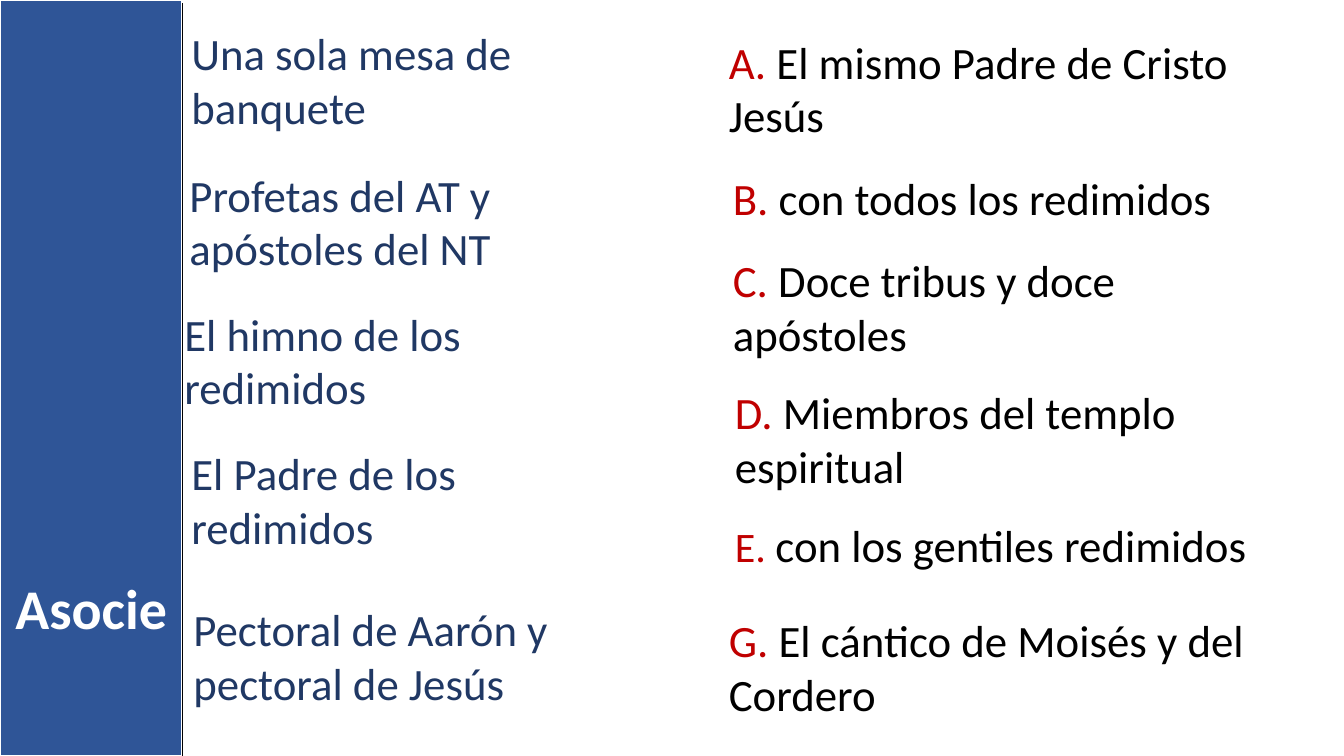
from lxml import etree
from pptx import Presentation
from pptx.dml.color import RGBColor
from pptx.enum.shapes import MSO_CONNECTOR, MSO_SHAPE
from pptx.enum.text import MSO_ANCHOR, MSO_AUTO_SIZE, PP_ALIGN
from pptx.oxml.ns import qn
from pptx.util import Inches, Pt

RECTANGLE = MSO_SHAPE.RECTANGLE
STRAIGHT = MSO_CONNECTOR.STRAIGHT
TOP = MSO_ANCHOR.TOP
CENTER = PP_ALIGN.CENTER
NO_AUTOFIT = MSO_AUTO_SIZE.NONE
TITLE_ONLY = 5

SLIDE_WIDTH, SLIDE_HEIGHT = 13.33, 7.5
SIDEBAR_WIDTH = 1.81
FONT = "Calibri"
TEXT_SIZE, TITLE_SIZE = 32, 40
LINE_HEIGHT, PADDING = 0.54, 0.1

BLUE, NAVY, RED = "2F5597", "203864", "C00000"
BLACK, WHITE = "000000", "FFFFFF"

# Left, top, width, text
CONCEPTS = [
    (1.8, 0.21, 4.43, "Una sola mesa de banquete"),
    (1.78, 1.61, 4.62, "Profetas del AT y apóstoles del NT"),
    (1.73, 2.99, 4.11, "El himno de los redimidos"),
    (1.8, 4.37, 4.6, "El Padre de los redimidos"),
    (1.82, 5.92, 4.41, "Pectoral de Aarón y pectoral de Jesús"),
]
# Left, top, width, lines, letter, letter size, text
ANSWERS = [
    (7.13, 0.29, 6.05, 2, "A. ", 32, "El mismo Padre de Cristo Jesús"),
    (7.17, 1.64, 5.92, 1, "B. ", 32, "con todos los redimidos"),
    (7.17, 2.46, 5.74, 2, "C. ", 32, "Doce tribus y doce apóstoles"),
    (7.19, 3.77, 5.8, 2, "D. ", 32, "Miembros del templo espiritual"),
    (7.19, 5.09, 5.53, 1, "E. ", 30, "con los gentiles redimidos"),
    (7.13, 6.03, 5.59, 2, "G. ", 32, "El cántico de Moisés y del Cordero"),
]


def color(value):
    return RGBColor.from_string(value)


def add_run(paragraph, text, size, fill, bold=False):
    run = paragraph.add_run()
    run.text = text
    run.font.name = FONT
    run.font.size = Pt(size)
    run.font.bold = bold
    run.font.color.rgb = color(fill)


def add_phrase(slide, left, top, width, lines, runs):
    """Place a text box as tall as its lines; runs are (text, size, color)."""
    height = lines * LINE_HEIGHT + PADDING
    box = slide.shapes.add_textbox(*map(Inches, (left, top, width, height)))
    box.text_frame.word_wrap = True
    for run in runs:
        add_run(box.text_frame.paragraphs[0], *run)


def add_sidebar(slide, left, top, width, height):
    bar = slide.shapes.add_shape(RECTANGLE, *map(Inches, (left, top, width, height)))
    bar.shadow.inherit = False
    bar.fill.solid()
    bar.fill.fore_color.rgb = color(BLUE)
    bar.line.color.rgb = color(WHITE)
    bar.line.width = Pt(1.5)

    title = slide.shapes.title
    title.left, title.top = Inches(left), Inches(top + 0.752 * height)
    title.width, title.height = Inches(width), Inches(0.77)
    frame = title.text_frame
    frame.auto_size = NO_AUTOFIT
    frame.word_wrap = True
    frame.vertical_anchor = TOP
    frame.paragraphs[0].alignment = CENTER
    add_run(frame.paragraphs[0], "Asocie", TITLE_SIZE, WHITE, bold=True)
    bar.element.addnext(title.element)

    right = left + width
    edge = slide.shapes.add_connector(
        STRAIGHT, *map(Inches, (right, top + 0.03, right, top + height)))
    edge.line.color.rgb = color(BLACK)
    edge.line.width = Pt(1)
    etree.SubElement(edge.element.spPr, qn("a:effectLst"))


def add_concepts(slide):
    for left, top, width, text in CONCEPTS:
        add_phrase(slide, left, top, width, 2, [(text, TEXT_SIZE, NAVY)])


def add_answers(slide):
    for left, top, width, lines, letter, letter_size, text in ANSWERS:
        add_phrase(slide, left, top, width, lines,
                   [(letter, letter_size, RED), (text, TEXT_SIZE, BLACK)])


def main():
    presentation = Presentation()
    presentation.slide_width = Inches(SLIDE_WIDTH)
    presentation.slide_height = Inches(SLIDE_HEIGHT)
    slide = presentation.slides.add_slide(presentation.slide_layouts[TITLE_ONLY])
    add_sidebar(slide, 0, 0, SIDEBAR_WIDTH, SLIDE_HEIGHT)
    add_concepts(slide)
    add_answers(slide)
    presentation.save("out.pptx")


if __name__ == "__main__":
    main()
